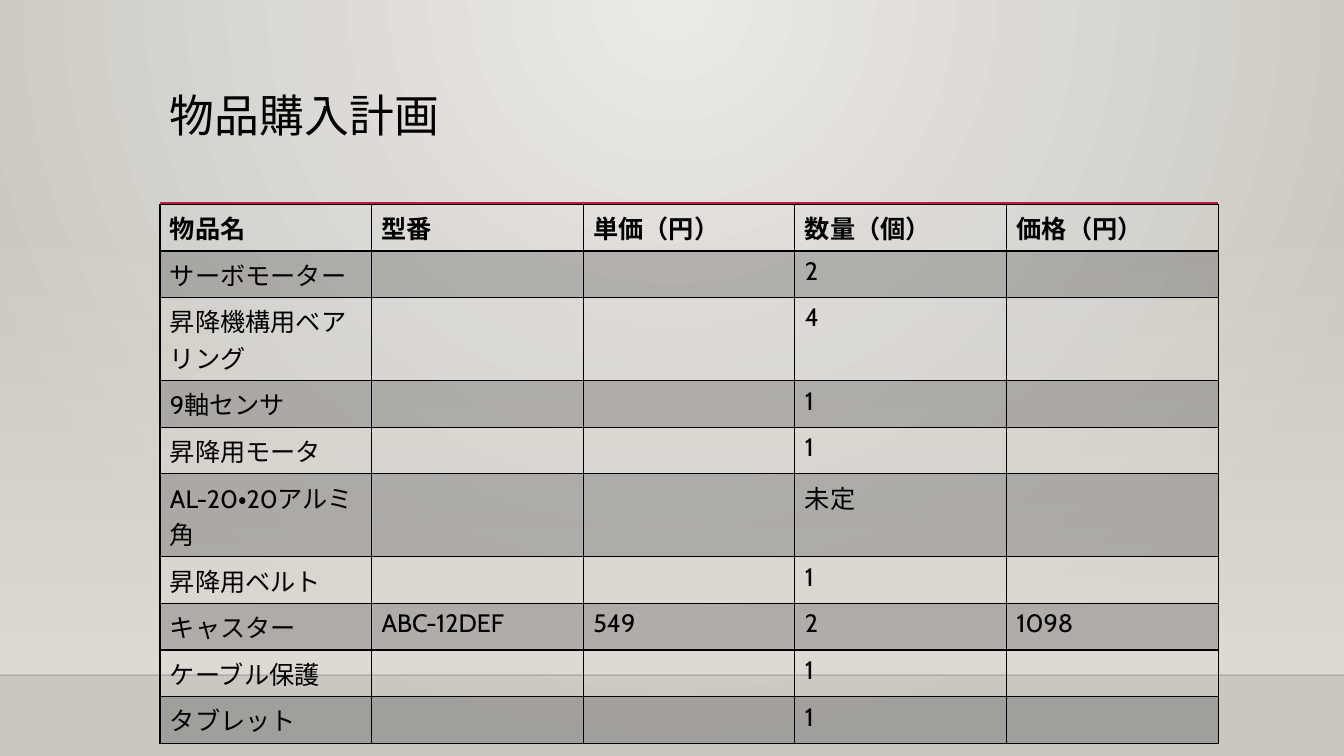
from dataclasses import dataclass

from lxml import etree
from pptx import Presentation
from pptx import util as u
from pptx.dml.color import RGBColor
from pptx.enum import lang, shapes, text
from pptx.oxml.ns import qn


@dataclass(frozen=True)
class Theme:
    """Colours, font and type sizes of the deck."""
    font: str = "Cabin"
    ink: str = "000000"
    accent: str = "B71E42"
    horizon: str = "000001"
    wall: str = "DFDBD5"
    glow: str = "ECEAE7"
    edge: str = "CAC7C1"
    title: int = 32
    body: int = 18
    veil: int = 20


THEME = Theme()
HEADER = ["物品名", "型番", "単価（円）", "数量（個）", "価格（円）"]
ITEMS = [
    ["サーボモーター", "", "", "2", ""],
    ["昇降機構用ベアリング", "", "", "4", ""],
    ["9軸センサ", "", "", "1", ""],
    ["昇降用モータ", "", "", "1", ""],
    ["AL-20・20アルミ角", "", "", "未定", ""],
    ["昇降用ベルト", "", "", "1", ""],
    ["キャスター", "ABC-12DEF", "549", "2", "1098"],
    ["ケーブル保護", "", "", "1", ""],
    ["タブレット", "", "", "1", ""],
]


def rgb(value):
    """Turn a hex string into a colour."""
    return RGBColor.from_string(value)


def set_alpha(element, percent):
    """Give the last colour inside an element an opacity."""
    color = list(element.iter(qn("a:srgbClr")))[-1]
    etree.SubElement(color, qn("a:alpha"), val=str(percent * 1000))


def format_font(font, size, bold=False):
    """Apply the deck's text format to a font."""
    formats = {"name": THEME.font, "size": u.Pt(size), "bold": bold,
               "language_id": lang.MSO_LANGUAGE_ID.JAPANESE}
    for name, value in formats.items():
        setattr(font, name, value)
    font.color.rgb = rgb(THEME.ink)


def fill_gradient(fill, colors):
    """Fill with a two-colour gradient."""
    fill.gradient()
    for stop, color in zip(fill.gradient_stops, colors):
        stop.color.rgb = rgb(color)


def add_rule(s, left, top, width, color, weight):
    """Draw a horizontal rule and return it."""
    rule = s.shapes.add_connector(shapes.MSO_CONNECTOR.STRAIGHT,
                                  left, top, left + width, top)
    rule.line.color.rgb = rgb(color)
    rule.line.width = u.Pt(weight)
    etree.SubElement(rule._element.spPr, qn("a:effectLst"))
    return rule


def add_backdrop(s, left, top, width, height):
    """Paint the glowing wall and the horizon line below it."""
    fill_gradient(s.background.fill, [THEME.glow, THEME.edge])
    lin = next(s._element.iter(qn("a:lin")))
    path = etree.Element(qn("a:path"), {"path": "circle"})
    etree.SubElement(path, qn("a:fillToRect"), l="43000", t="0", r="43000", b="100000")
    lin.getparent().replace(lin, path)

    sp = s.shapes.add_shape(shapes.MSO_SHAPE.RECTANGLE, left, top, width, height)
    sp.shadow.inherit = False
    sp.line.fill.background()
    fill_gradient(sp.fill, [THEME.wall, THEME.wall])
    sp.fill.gradient_angle = 270
    set_alpha(next(sp._element.iter(qn("a:gs"))), 0)

    horizon = add_rule(s, left, top + height, width, THEME.horizon, 1)
    set_alpha(horizon._element.spPr, THEME.veil)


def add_title(s, left, top, width, height, words):
    """Place the title with the accent rule under it."""
    add_rule(s, left, top + height - u.Cm(0.02), width, THEME.accent, 2.5)
    sp = s.shapes.title
    box = {"left": left, "top": top, "width": width, "height": height}
    for name, value in box.items():
        setattr(sp, name, value)
    tf = sp.text_frame
    frame = {"word_wrap": True, "auto_size": text.MSO_AUTO_SIZE.NONE,
             "vertical_anchor": text.MSO_ANCHOR.TOP}
    for name, value in frame.items():
        setattr(tf, name, value)
    p = tf.paragraphs[0]
    p.alignment = text.PP_ALIGN.LEFT
    p.line_spacing = 0.9
    r = p.add_run()
    r.text = words
    format_font(r.font, THEME.title)


def add_borders(cell, weights):
    """Draw the four borders of a cell, given weights by side."""
    tcPr = cell._tc.get_or_add_tcPr()
    for side, weight in weights.items():
        ln = etree.SubElement(tcPr, qn(f"a:ln{side}"), w=str(u.Pt(weight)))
        solid = etree.SubElement(ln, qn("a:solidFill"))
        etree.SubElement(solid, qn("a:srgbClr"), val=THEME.ink)


def add_purchase_table(s, left, top, width, row_height):
    """Place the banded table of items to buy."""
    rows = [HEADER, *ITEMS]
    table = s.shapes.add_table(len(rows), len(HEADER), left, top, width,
                               row_height * len(rows)).table
    table.first_row = table.horz_banding = False
    for i, row in enumerate(rows):
        for j, words in enumerate(row):
            cell = table.cell(i, j)
            add_borders(cell, {"L": 1, "R": 1, "T": 2 if i == 1 else 1,
                               "B": 2 if i == 0 else 1})
            if i % 2:
                cell.fill.solid()
                cell.fill.fore_color.rgb = rgb(THEME.ink)
                set_alpha(cell._tc.tcPr, THEME.veil)
            else:
                cell.fill.background()
            if words:
                r = cell.text_frame.paragraphs[0].add_run()
                r.text = words
                format_font(r.font, THEME.body, bold=i == 0)


def main():
    """Build the purchase plan slide."""
    prs = Presentation()
    prs.slide_width, prs.slide_height = u.Cm(33.87), u.Cm(19.05)
    s = prs.slides.add_slide(prs.slide_layouts[5])
    left, width = u.Cm(4.03), u.Cm(26.67)
    title_top, title_height = u.Cm(2.24), u.Cm(2.91)
    add_backdrop(s, 0, u.Cm(5.61), prs.slide_width, u.Cm(11.4))
    add_title(s, left, title_top, width, title_height, "物品購入計画")
    add_purchase_table(s, left, title_top + title_height, width, u.Cm(1.03))
    prs.save("out.pptx")


if __name__ == "__main__":
    main()
